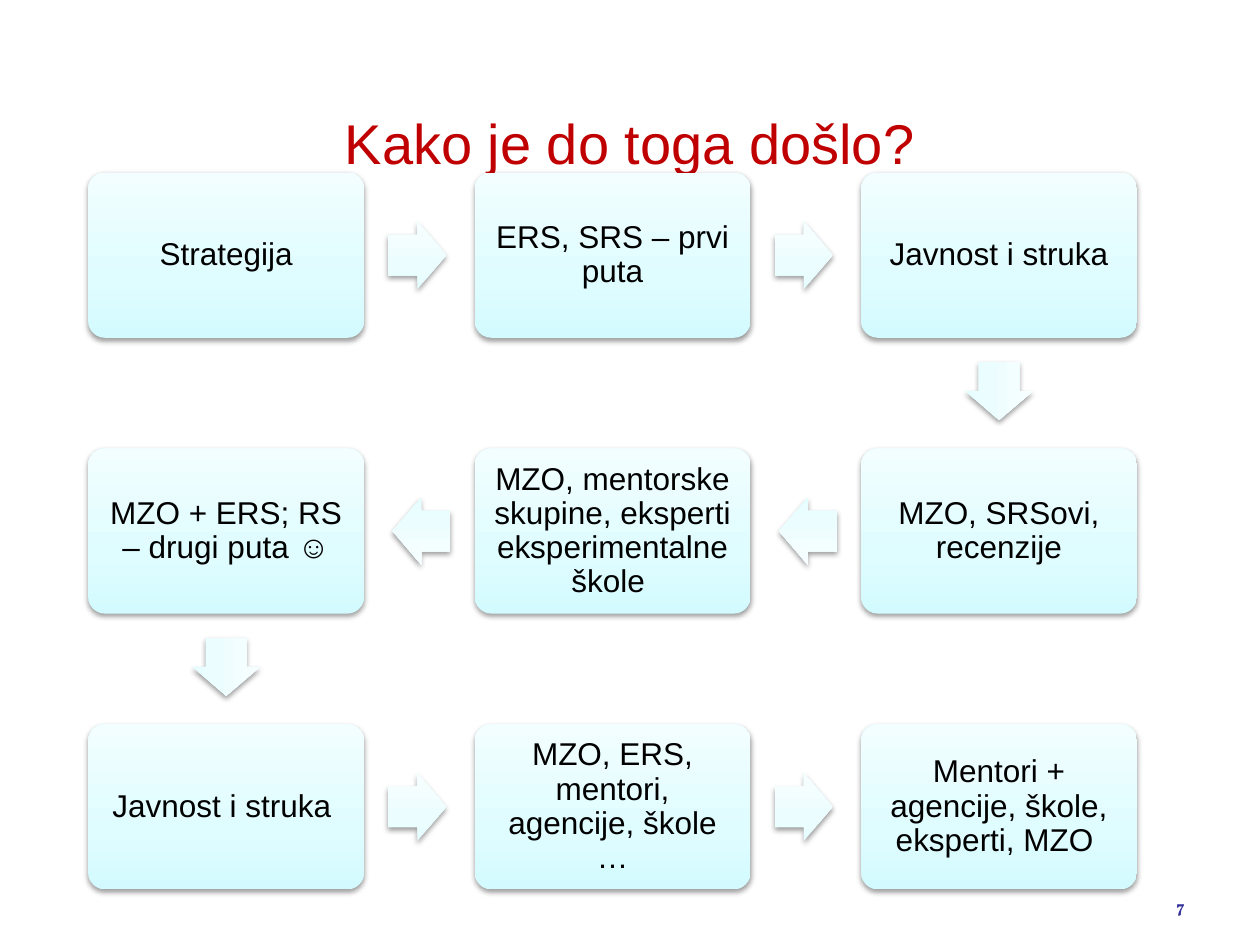
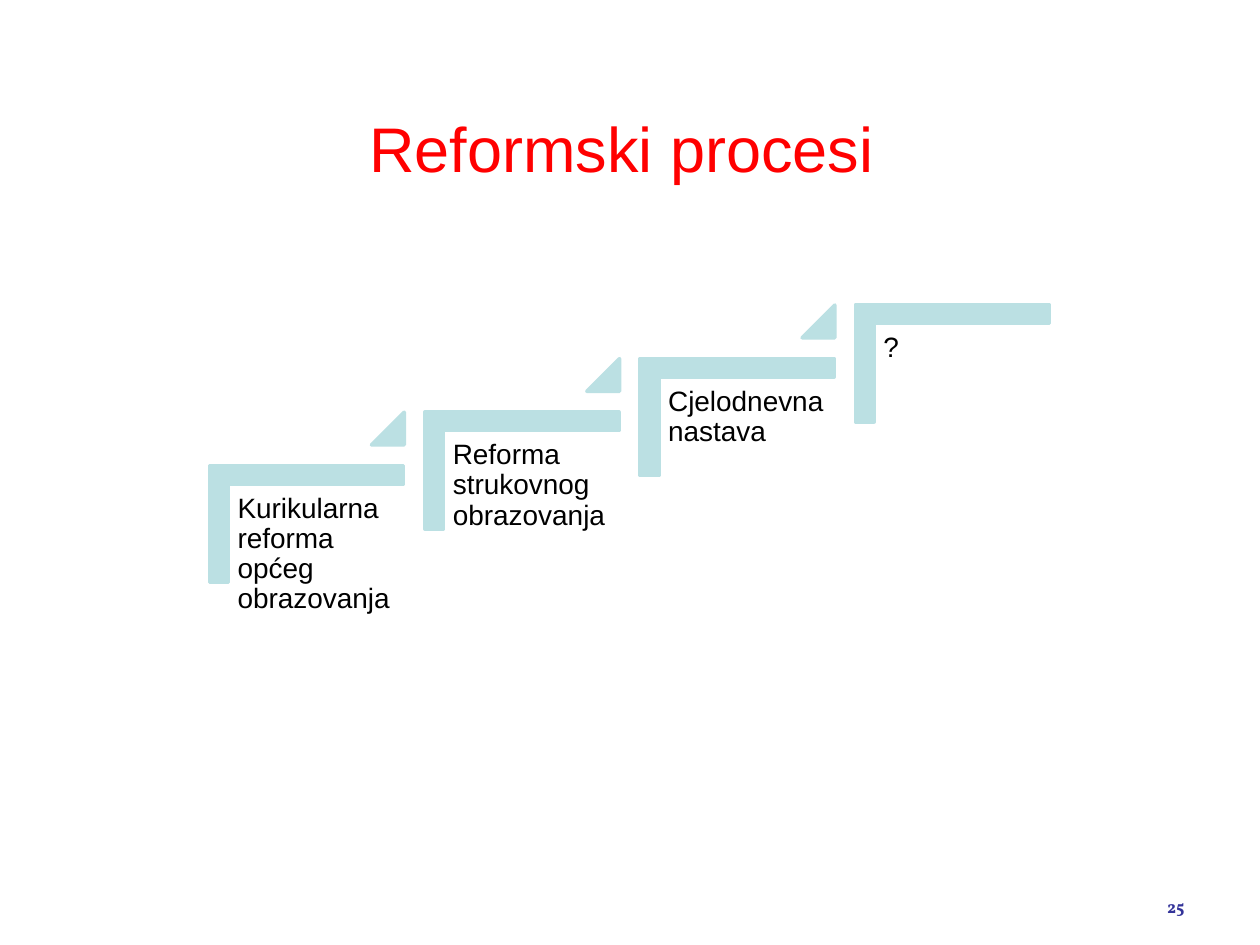
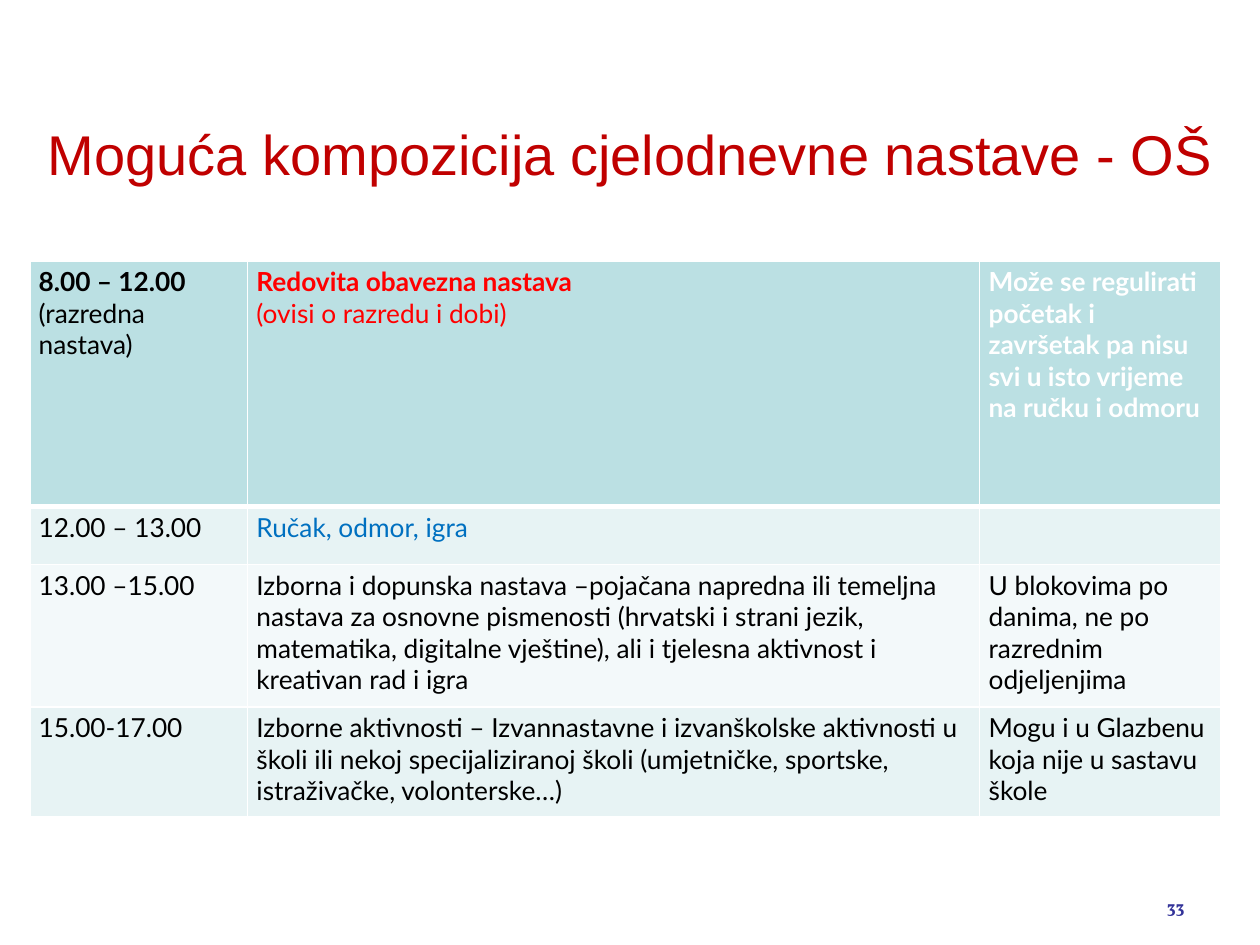
"""Build three slides on the school reform: a winding flow, rising steps and a day plan."""
from lxml.etree import SubElement
from pptx import Presentation
from pptx.dml.color import RGBColor
from pptx.enum.shapes import MSO_SHAPE
from pptx.enum.text import MSO_ANCHOR, MSO_AUTO_SIZE, PP_ALIGN
from pptx.oxml.ns import qn
from pptx.util import Cm, Pt

HUES = {
    "title": "C00000", "red": "FF0000", "blue": "0070C0", "page": "333399",
    "black": "000000", "white": "FFFFFF", "aqua": "BBE0E3",
    "pale": "E7F3F4", "faint": "F3F9FA",
}
CARD = [(0, "D3FBFF"), (35, "DFFCFF"), (100, "F2FEFF")]
ARROW = [(0, "E5FDFF"), (35, "ECFDFF"), (100, "F7FEFF")]

FLOW = [
    "Strategija", "ERS, SRS – prvi puta", "Javnost i struka",
    "MZO, SRSovi, recenzije",
    "MZO, mentorske skupine, eksperti eksperimentalne škole ",
    "MZO + ERS; RS – drugi puta ☺",
    "Javnost i struka ", "MZO, ERS, mentori, agencije, škole …",
    "Mentori + agencije, škole, eksperti, MZO ",
]
STEPS = [
    "Kurikularna reforma općeg obrazovanja", "Reforma strukovnog obrazovanja",
    "Cjelodnevna nastava", "?",
]
PLAN = [
    [["8.00 – 12.00", "(razredna nastava)"],
     ["Redovita obavezna nastava", "(ovisi o razredu i dobi)"],
     ["Može se regulirati početak i završetak pa nisu svi u isto vrijeme na ručku i odmoru"]],
    [["12.00 – 13.00"], ["Ručak, odmor, igra"], []],
    [["13.00 –15.00"],
     ["Izborna i dopunska nastava –pojačana napredna ili temeljna nastava za osnovne "
      "pismenosti (hrvatski i strani jezik, matematika, digitalne vještine), ali i "
      "tjelesna aktivnost i kreativan rad i igra"],
     ["U blokovima po danima, ne po razrednim odjeljenjima"]],
    [["15.00-17.00"],
     ["Izborne aktivnosti – Izvannastavne i izvanškolske aktivnosti u školi ili nekoj "
      "specijaliziranoj školi (umjetničke, sportske, istraživačke, volonterske…)"],
     ["Mogu i u Glazbenu koja nije u sastavu škole"]],
]
INKS = {(0, 1): "red", (0, 2): "white", (1, 1): "blue"}
FILLS = ["aqua", "pale", "faint", "pale"]
COLS = [4.39, 14.76, 4.85]
ROWS = [4.95, 1.17, 2.87, 2.21]


def color(name):
    """Return the named colour."""
    return RGBColor.from_string(HUES[name])


def style(para, size, ink="black", face="Arial", bold=False, align=PP_ALIGN.LEFT):
    """Set the font and alignment of a paragraph."""
    para.alignment = align
    font = para.font
    font.name, font.size, font.bold = face, Pt(size), bold
    font.color.rgb = color(ink)


def pad(item, side, top):
    """Set the inner margins of a text frame or a cell."""
    item.margin_left = item.margin_right = Cm(side)
    item.margin_top = item.margin_bottom = Cm(top)


def label(frame, text, size, align):
    """Write a wrapped diagram label into a text frame."""
    frame.word_wrap = True
    pad(frame, 0.18, 0.18)
    para = frame.paragraphs[0]
    para.text = text
    para.line_spacing = 0.9
    style(para, size, align=align)


def new_slide(deck, text, box, size, ink, page):
    """Add a slide with its title and page number."""
    slide = deck.slides.add_slide(deck.slide_layouts[5])
    title = slide.shapes.title
    title.left, title.top, title.width, title.height = map(Cm, box)
    frame = title.text_frame
    frame.text = text
    frame.word_wrap = True
    frame.auto_size = MSO_AUTO_SIZE.NONE
    frame.vertical_anchor = MSO_ANCHOR.TOP
    frame.margin_top = Cm(0.25)
    style(frame.paragraphs[0], size, ink, align=PP_ALIGN.CENTER)
    note = slide.shapes.add_textbox(Cm(22.38), Cm(17.93), Cm(1.75), Cm(0.74))
    note.text_frame.word_wrap = True
    para = note.text_frame.paragraphs[0]
    para.text = str(page)
    style(para, 10, "page", "Vollkorn", True, PP_ALIGN.RIGHT)
    return slide


def glossy(slide, kind, box, stops):
    """Add a shape with an upward gradient and a soft shadow."""
    shape = slide.shapes.add_shape(kind, *map(Cm, box))
    shape.line.fill.background()
    shape.fill.gradient()
    shape.fill.gradient_angle = 90
    props = shape.element.spPr
    ramp = props.find(qn("a:gradFill")).find(qn("a:gsLst"))
    ramp.clear()
    for pos, tone in stops:
        stop = SubElement(ramp, qn("a:gs"), pos=str(pos * 1000))
        SubElement(stop, qn("a:srgbClr"), val=tone)
    shape.shadow.inherit = False
    shade = SubElement(props.find(qn("a:effectLst")), qn("a:outerShdw"),
                       blurRad="40000", dist="20000", dir="5400000", rotWithShape="0")
    tint = SubElement(shade, qn("a:srgbClr"), val=HUES["black"])
    SubElement(tint, qn("a:alpha"), val="38000")
    return shape


def flat(slide, kind, box, *adjust):
    """Add a plain aqua shape with the given adjustments."""
    shape = slide.shapes.add_shape(kind, *map(Cm, box))
    shape.shadow.inherit = False
    shape.fill.solid()
    shape.fill.fore_color.rgb = color("aqua")
    shape.line.color.rgb = color("aqua")
    shape.line.width = Pt(2)
    for index, value in enumerate(adjust):
        shape.adjustments[index] = value
    return shape


def corner(slide, box):
    """Add an L-shaped corner turned to open down and right."""
    shape = flat(slide, MSO_SHAPE.HALF_FRAME, box, 0.16, 0.16)
    shape.element.spPr.find(qn("a:prstGeom")).set("prst", "corner")
    shape.rotation = 90


def flow(slide):
    """Lay the cards out in a winding path joined by block arrows."""
    wide, high = 5.56, 3.33
    spots = []
    for i in range(len(FLOW)):
        row, col = divmod(i, 3)
        col = 2 - col if row % 2 else col
        spots.append((1.78 + 7.79 * col, 3.48 + 5.56 * row))
    for i, (text, (x, y)) in enumerate(zip(FLOW, spots)):
        card = glossy(slide, MSO_SHAPE.ROUNDED_RECTANGLE, (x, y, wide, high), CARD)
        card.adjustments[0] = 0.1
        card.text_frame.vertical_anchor = MSO_ANCHOR.MIDDLE
        label(card.text_frame, text, 18, PP_ALIGN.CENTER)
        if i + 1 < len(spots):
            arrow(slide, (x + wide / 2, y + high / 2), spots[i + 1], (wide, high))


def arrow(slide, start, spot, size):
    """Add a block arrow between a card's centre and the next card."""
    end = [a + b / 2 for a, b in zip(spot, size)]
    turn = 90 if end[1] > start[1] else 0 if end[0] > start[0] else 180
    dx, dy = {0: (1, 0), 90: (0, 1), 180: (-1, 0)}[turn]
    x = (start[0] + end[0]) / 2 - 0.04 * dx
    y = (start[1] + end[1]) / 2 - 0.04 * dy
    wide, high = 1.17, 1.37
    box = (x - wide / 2, y - high / 2, wide, high)
    shape = glossy(slide, MSO_SHAPE.RIGHT_ARROW, box, ARROW)
    shape.adjustments[0] = 0.6
    shape.rotation = turn


def stairs(slide):
    """Draw rising corner steps with a triangle between each pair."""
    for i, text in enumerate(STEPS):
        x, y = 5 + 4.34 * i, 8.61 - 1.08 * i
        corner(slide, (x, y, 2.36, 3.91))
        box = slide.shapes.add_textbox(Cm(x - 0.39), Cm(y + 1.17), Cm(3.53), Cm(3.1))
        label(box.text_frame, text, 16, PP_ALIGN.LEFT)
        if i + 1 < len(STEPS):
            flat(slide, MSO_SHAPE.ISOSCELES_TRIANGLE, (x + 2.49, y - 0.3, 0.66, 0.66), 1)


def edge(cell, head):
    """Draw white borders round a cell, thicker below the head row."""
    props = cell._tc.get_or_add_tcPr()
    for side in "LRTB":
        width = Pt(3 if head and side == "B" else 1)
        line = SubElement(props, qn(f"a:ln{side}"), w=str(int(width)))
        fill = SubElement(line, qn("a:solidFill"))
        SubElement(fill, qn("a:srgbClr"), val=HUES["white"])


def plan(slide):
    """Add the table with the plan of the school day."""
    table = slide.shapes.add_table(len(ROWS), len(COLS), Cm(0.6), Cm(5.26),
                                   Cm(sum(COLS)), Cm(sum(ROWS))).table
    for col, width in zip(table.columns, COLS):
        col.width = Cm(width)
    for r, height in enumerate(ROWS):
        table.rows[r].height = Cm(height)
        for c, lines in enumerate(PLAN[r]):
            cell = table.cell(r, c)
            pad(cell, 0.18, 0.1)
            edge(cell, r == 0)
            cell.fill.solid()
            cell.fill.fore_color.rgb = color(FILLS[r])
            cell.text = "\n".join(lines)
            for n, para in enumerate(cell.text_frame.paragraphs):
                style(para, 15, INKS.get((r, c), "black"), "Lato", r == 0 and n == 0)


def main():
    """Build and save the deck."""
    deck = Presentation()
    deck.slide_width, deck.slide_height = Cm(25.4), Cm(19.05)
    flow(new_slide(deck, "Kako je do toga došlo?", (1.27, 1.93, 22.86, 2.77),
                   32, "title", 7))
    stairs(new_slide(deck, "Reformski procesi ", (1.27, 1.96, 22.86, 3.18),
                     36, "red", 25))
    plan(new_slide(deck, "Moguća kompozicija cjelodnevne nastave - OŠ ",
                   (0.58, 2.16, 24.26, 2.39), 32, "title", 33))
    deck.save("out.pptx")


if __name__ == "__main__":
    main()
